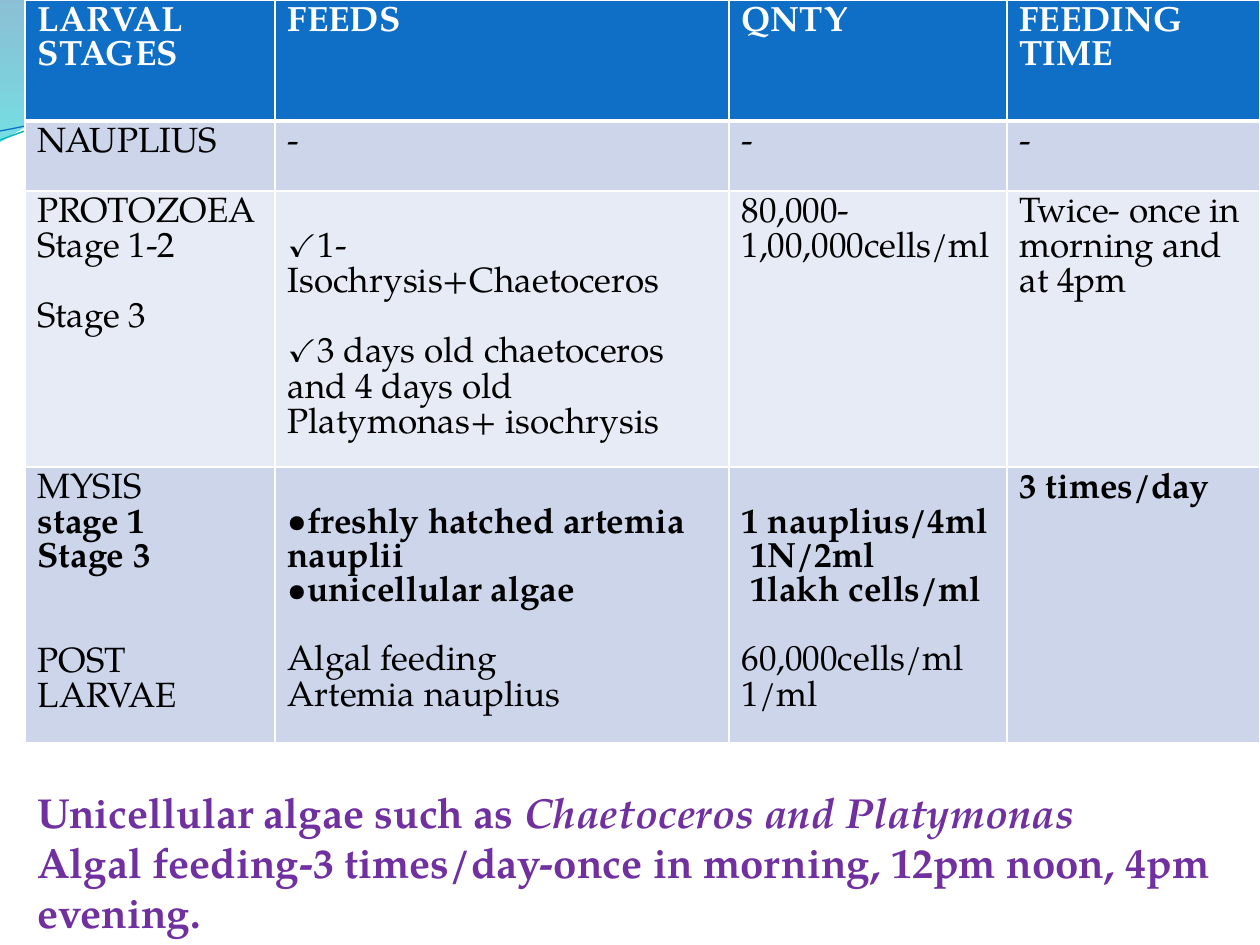
"""Build a slide with a larval feeding table and a note on algal feeding."""
from dataclasses import dataclass

import lxml.etree
import pptx
import pptx.dml.color
import pptx.oxml
import pptx.oxml.ns
import pptx.util

RGBColor = pptx.dml.color.RGBColor
EMU_PER_PX = 914400 // 126
FONT = "TeX Gyre Pagella"
WHITE = RGBColor(0xFF, 0xFF, 0xFF)
BLACK = RGBColor(0x00, 0x00, 0x00)
PURPLE = RGBColor(0x70, 0x30, 0xA0)
BLUE = RGBColor(0x0F, 0x6F, 0xC6)
TEAL = RGBColor(0x0A, 0xB8, 0xBF)
DARK_BAND = RGBColor(0xCC, 0xD5, 0xEA)
LIGHT_BAND = RGBColor(0xE7, 0xEB, 0xF5)
WAVE_STOPS = ((0, RGBColor(0x00, 0x74, 0xA1), 45), (100, RGBColor(0x00, 0xC6, 0xCF), 55))
CREST_STOPS = ((0, RGBColor(0x00, 0xA1, 0xA9), 30), (80, RGBColor(0x00, 0x8B, 0xBF), 45))
TABLE_LEFT = 25
TABLE_WIDTH = 1235
COLUMN_WIDTHS = (250, 454, 278, 253)
ROW_HEIGHTS = (121, 70, 276, 276)
ROW_FILLS = (BLUE, DARK_BAND, LIGHT_BAND, DARK_BAND)
CELL_MARGIN = 6
TEXT_LINE = 35
TEXT_SIZE = 20


@dataclass(frozen=True)
class Line:
    """One paragraph of a cell, with the empty lines above it."""
    text: str
    bold: bool = False
    lines_above: int = 0
    bullet: str = ""


@dataclass(frozen=True)
class Wave:
    """An outline whose tuples are line ends (2 values) or Bézier curves (6)."""
    start: tuple
    segments: tuple
    stops: tuple = ()
    color: RGBColor = TEAL
    line_width: float = 0


WAVES = (
    Wave((0, 0), ((554, -1), (600, 21, 837, 79, 955, 79), (1075, 79, 1207, 33, 1260, 11),
                  (1261, 45), (1239, 55, 1096, 96, 940, 95), (784, 95, 481, 35, 324, 43),
                  (163, 45, 58, 105, -1, 142)), stops=WAVE_STOPS),
    Wave((604, -1), ((642, 14, 859, 78, 969, 82), (1079, 87, 1211, 40, 1260, 26),
                     (1260, 0)), stops=CREST_STOPS),
    Wave((0, 140), ((60, 117, 199, 72, 349, 66), (498, 59, 747, 112, 898, 101),
                    (1050, 89, 1182, 19, 1257, -3)), color=TEAL, line_width=0.85),
    Wave((0, 131), ((59, 121, 207, 77, 357, 71), (508, 64, 752, 106, 903, 95),
                    (1053, 84, 1186, 26, 1260, 8)), color=BLUE, line_width=0.75),
)

ROWS = (
    tuple((Line(title, bold=True),)
          for title in ("LARVAL STAGES", "FEEDS", "QNTY", "FEEDING TIME")),
    tuple((Line(entry),) for entry in ("NAUPLIUS", "-", "-", "-")),
    (
        (Line("PROTOZOEA"), Line("Stage 1-2"), Line("Stage 3", lines_above=1)),
        (Line("1-Isochrysis+Chaetoceros", lines_above=1, bullet="✓"),
         Line("3 days old chaetoceros and 4 days old Platymonas+ isochrysis",
              lines_above=1, bullet="✓")),
        (Line("80,000-1,00,000cells/ml"),),
        (Line("Twice- once in morning and at 4pm"),),
    ),
    (
        (Line("MYSIS"), Line("stage 1", bold=True), Line("Stage 3", bold=True),
         Line("POST LARVAE", lines_above=2)),
        (Line("freshly hatched artemia nauplii", bold=True, lines_above=1, bullet="•"),
         Line("unicellular algae", bold=True, bullet="•"),
         Line("Algal feeding", lines_above=1), Line("Artemia nauplius")),
        (Line("1 nauplius/4ml", bold=True, lines_above=1), Line(" 1N/2ml", bold=True),
         Line(" 1lakh cells/ml", bold=True),
         Line("60,000cells/ml", lines_above=1), Line("1/ml")),
        (Line("3 times/day", bold=True),),
    ),
)


def px(length: int) -> int:
    """Turn pixels into EMU."""
    return pptx.util.Emu(length * EMU_PER_PX)


def add_xml(parent, tag: str, **attributes: str):
    """Append a DrawingML element and return it."""
    return lxml.etree.SubElement(parent, pptx.oxml.ns.qn(f"a:{tag}"), attributes)


def add_text(paragraph, text: str, *, size: int = TEXT_SIZE, color: RGBColor = BLACK,
             bold: bool = False, italic: bool = False) -> None:
    """Append a formatted run to a paragraph."""
    run = paragraph.add_run()
    run.text = text
    run.font.name = FONT
    run.font.size = pptx.util.Pt(size)
    run.font.color.rgb = color
    run.font.bold = bold
    run.font.italic = italic


def bend_segments(shape, wave: Wave) -> None:
    """Join the straight pieces of each curved segment into one Bézier curve."""
    pieces = iter(list(shape._element.iter(pptx.oxml.ns.qn("a:lnTo"))))
    for segment in wave.segments:
        first = next(pieces)
        if len(segment) == 6:
            curve = lxml.etree.Element(pptx.oxml.ns.qn("a:cubicBezTo"))
            first.addprevious(curve)
            for piece in (first, next(pieces), next(pieces)):
                curve.append(piece[0])
                piece.getparent().remove(piece)


def draw_wave(slide, wave: Wave) -> None:
    """Draw a wave as a translucent band or as a thin line."""
    points = [(px(segment[index]), px(segment[index + 1]))
              for segment in wave.segments for index in range(0, len(segment), 2)]
    builder = slide.shapes.build_freeform(px(wave.start[0]), px(wave.start[1]))
    builder.add_line_segments(points, close=bool(wave.stops))
    shape = builder.convert_to_shape()
    bend_segments(shape, wave)
    shape.shadow.inherit = False
    shape.fill.background()
    if not wave.stops:
        shape.line.color.rgb = wave.color
        shape.line.width = pptx.util.Pt(wave.line_width)
        return
    shape.line.fill.background()
    properties = shape._element.spPr
    gradient = add_xml(properties, "gradFill", rotWithShape="1")
    stop_list = add_xml(gradient, "gsLst")
    for position, color, opacity in wave.stops:
        stop = add_xml(stop_list, "gs", pos=str(position * 1000))
        add_xml(add_xml(stop, "srgbClr", val=str(color)), "alpha", val=str(opacity * 1000))
    add_xml(gradient, "lin", ang="5400000", scaled="0")
    properties.replace(properties.find(pptx.oxml.ns.qn("a:noFill")), gradient)


def draw_borders(cell, top: int, bottom: int) -> None:
    """Give a cell white borders, with top and bottom widths in points."""
    properties = cell._tc.get_or_add_tcPr()
    for side, width in (("L", 1), ("R", 1), ("T", top), ("B", bottom)):
        border = add_xml(properties, f"ln{side}", w=str(pptx.util.Pt(width)))
        add_xml(add_xml(border, "solidFill"), "srgbClr", val=str(WHITE))


def fill_cell(cell, lines: tuple[Line, ...], color: RGBColor) -> None:
    """Write the lines of a cell."""
    cell.margin_top = px(CELL_MARGIN + TEXT_LINE * lines[0].lines_above)
    cell.margin_bottom = px(CELL_MARGIN)
    for index, line in enumerate(lines):
        frame = cell.text_frame
        paragraph = frame.add_paragraph() if index else frame.paragraphs[0]
        if index and line.lines_above:
            paragraph.space_before = px(TEXT_LINE * line.lines_above)
        if line.bullet:
            properties = paragraph._p.get_or_add_pPr()
            properties.set("marL", "0")
            properties.set("indent", "0")
            add_xml(properties, "buFont", typeface=FONT)
            add_xml(properties, "buChar", char=line.bullet)
        add_text(paragraph, line.text, color=color, bold=line.bold)


def draw_table(slide) -> None:
    """Draw the feeding table."""
    table = slide.shapes.add_table(len(ROWS), len(COLUMN_WIDTHS), px(TABLE_LEFT), px(0),
                                   px(TABLE_WIDTH), px(sum(ROW_HEIGHTS))).table
    for column, width in zip(table.columns, COLUMN_WIDTHS):
        column.width = px(width)
    for index, (row, height) in enumerate(zip(table.rows, ROW_HEIGHTS)):
        row.height = px(height)
        for cell, lines in zip(row.cells, ROWS[index]):
            draw_borders(cell, 3 if index == 1 else 1, 3 if index == 0 else 1)
            cell.fill.solid()
            cell.fill.fore_color.rgb = ROW_FILLS[index]
            fill_cell(cell, lines, BLACK if index else WHITE)


def draw_note(slide) -> None:
    """Write the note below the table."""
    frame = slide.shapes.add_textbox(px(TABLE_LEFT), px(780), px(TABLE_WIDTH), px(165)).text_frame
    frame.word_wrap = True
    first = frame.paragraphs[0]
    style = {"size": 24, "color": PURPLE, "bold": True}
    add_text(first, "Unicellular algae such as ", **style)
    add_text(first, "Chaetoceros and Platymonas", italic=True, **style)
    add_text(frame.add_paragraph(),
             "Algal feeding-3 times/day-once in morning, 12pm noon, 4pm evening.", **style)


def main() -> None:
    """Build and save the presentation."""
    presentation = pptx.Presentation()
    presentation.slide_width = px(1260)
    presentation.slide_height = px(945)
    slide = presentation.slides.add_slide(presentation.slide_layouts[6])
    for wave in WAVES:
        draw_wave(slide, wave)
    draw_table(slide)
    draw_note(slide)
    presentation.save("out.pptx")


if __name__ == "__main__":
    main()
